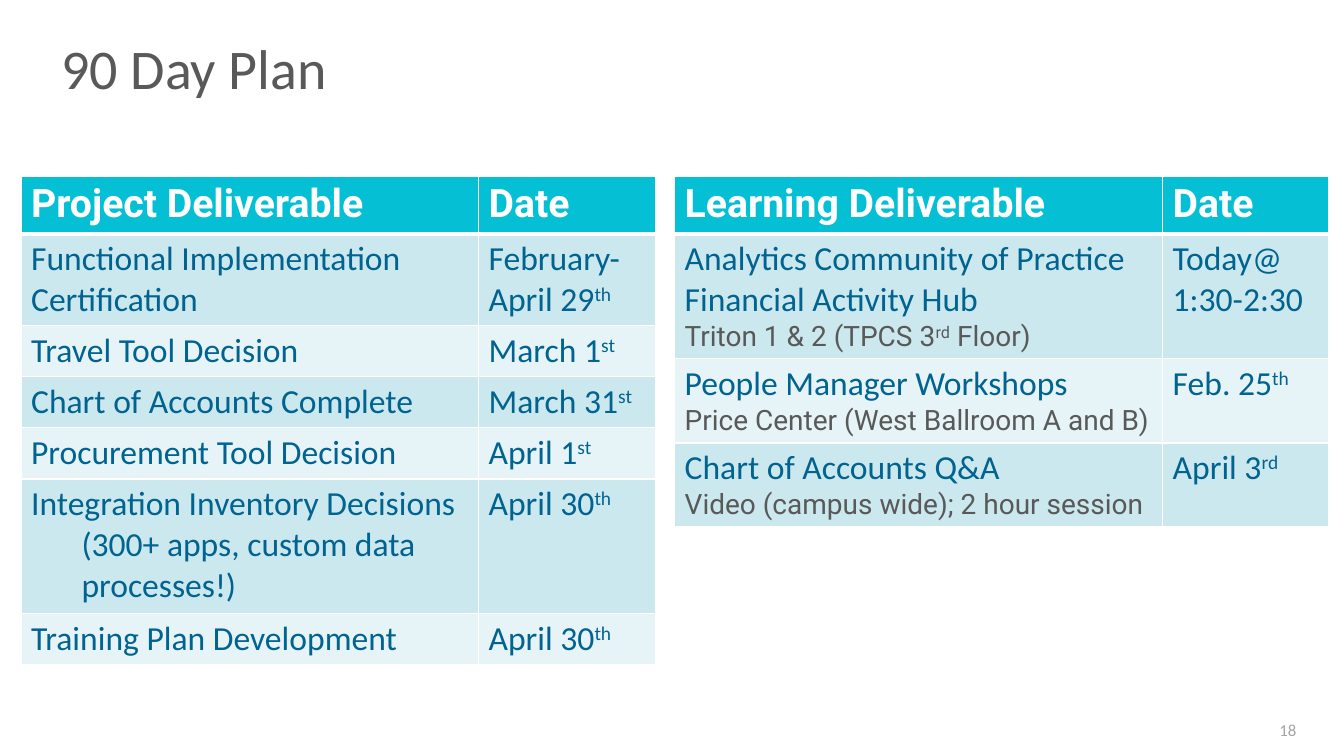
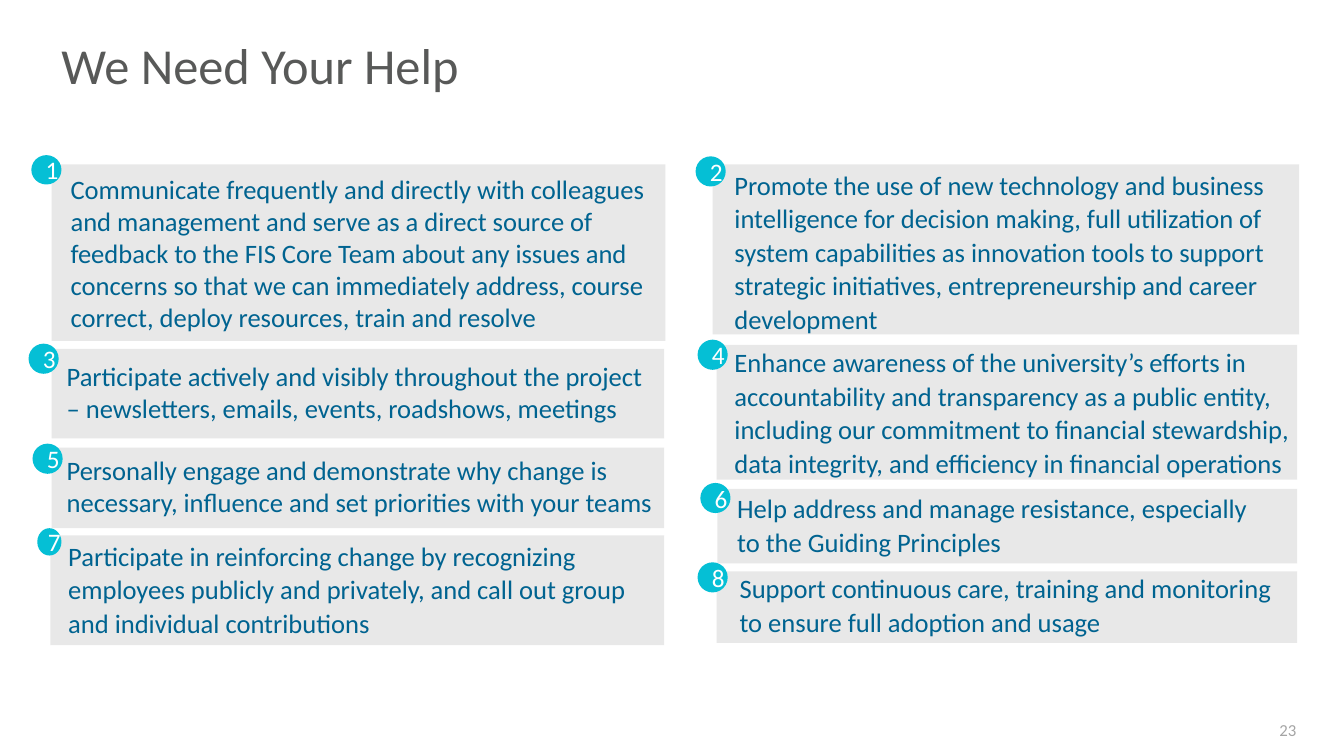
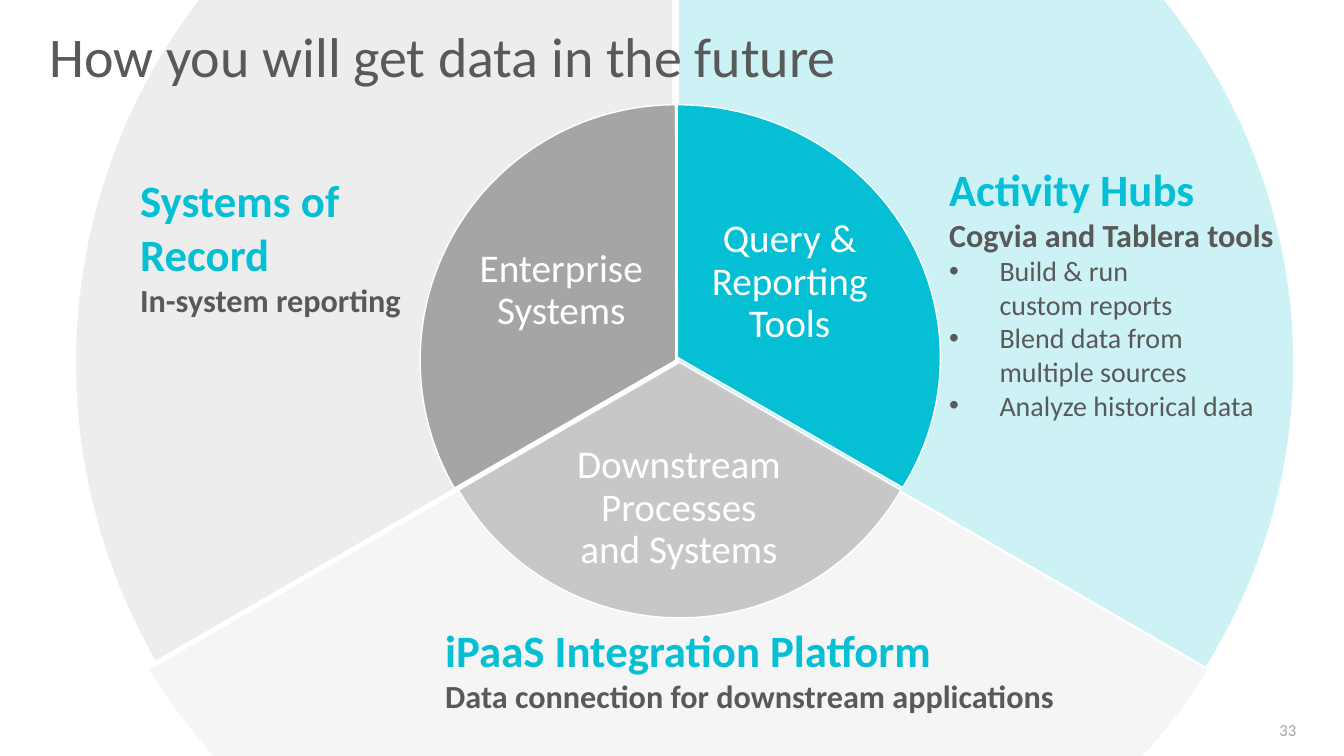
from dataclasses import dataclass, replace

from lxml import etree
from pptx import Presentation
from pptx import util as u
from pptx.dml.color import RGBColor
from pptx.enum import shapes, text
from pptx.oxml import ns

WHITE = RGBColor(0xFF, 0xFF, 0xFF)
SLATE = RGBColor(0x58, 0x59, 0x58)
GREY = RGBColor(0xA5, 0xA5, 0xA5)
PANEL = RGBColor(0xC9, 0xC9, 0xC9)
TEAL = RGBColor(0x05, 0xBF, 0xD5)
NAVY = RGBColor(0x00, 0x63, 0x90)
BAND_DARK = RGBColor(0xCC, 0xE8, 0xEF)
BAND_LIGHT = RGBColor(0xE7, 0xF4, 0xF7)

INDENT = 1.27


@dataclass(frozen=True)
class Style:
    size: float
    color: RGBColor
    font: str = "Calibri"
    bold: bool = False
    raised: bool = False


TITLE = Style(40, SLATE)
PAGE_NUMBER = Style(12, GREY)
HEADER = Style(28, WHITE, "Roboto", True)
BODY = Style(24, NAVY)
DETAIL = Style(20, SLATE, "Roboto")
CARD = Style(19, NAVY)
BADGE = Style(18, WHITE)
WEDGE = Style(28, WHITE)
HEADING = Style(32, TEAL, bold=True)
SUBHEADING = Style(23, SLATE, bold=True)
BULLET = Style(20, SLATE)


def place(box):
    return [u.Cm(length) for length in box]


def add_runs(para, words, style):
    for index, line in enumerate(words.split("\n")):
        if index:
            para.add_line_break()
        if not line:
            continue
        span = para.add_run()
        span.text = line
        span.font.size = u.Pt(style.size)
        span.font.name = style.font
        span.font.bold = style.bold
        span.font.color.rgb = style.color
        if style.raised:
            span.font._element.set("baseline", "30000")


def indent_para(para, left, first=0):
    props = para._p.get_or_add_pPr()
    props.set("marL", str(u.Cm(left)))
    props.set("indent", str(u.Cm(first)))
    return props


def add_bullet(para):
    props = indent_para(para, INDENT, -INDENT)
    etree.SubElement(props, ns.qn("a:buFont")).set("typeface", "Arial")
    etree.SubElement(props, ns.qn("a:buChar")).set("char", "•")


def fill_frame(frame, paragraphs):
    for index, runs in enumerate(paragraphs):
        para = frame.add_paragraph() if index else frame.paragraphs[0]
        for words, style in runs:
            add_runs(para, words, style)
    return frame.paragraphs


def add_text(page, box, paragraphs, align=None, spacing=None,
             anchor=text.MSO_ANCHOR.TOP, inset=None):
    frame = page.shapes.add_textbox(*place(box)).text_frame
    frame.word_wrap = True
    frame.vertical_anchor = anchor
    if inset is not None:
        frame.margin_left = frame.margin_right = u.Cm(inset)
        frame.margin_top = frame.margin_bottom = u.Cm(inset)
    paras = fill_frame(frame, paragraphs)
    for para in paras:
        para.alignment = align
        para.line_spacing = spacing
    return paras


def add_figure(page, kind, box, color, opacity=100, outline=None):
    shape = page.shapes.add_shape(kind, *place(box))
    shape.shadow.inherit = False
    shape.fill.solid()
    shape.fill.fore_color.rgb = color
    if opacity < 100:
        tint = shape._element.spPr.find(ns.qn("a:solidFill"))[0]
        etree.SubElement(tint, ns.qn("a:alpha")).set("val", str(opacity * 1000))
    if outline is None:
        shape.line.fill.background()
    else:
        shape.line.color.rgb = outline
        shape.line.width = u.Pt(1)
    return shape


def new_page(deck, number):
    page = deck.slides.add_slide(deck.slide_layouts[6])
    add_text(page, (25.3, 17.88, 7.62, 1.02), [[(str(number), PAGE_NUMBER)]],
             text.PP_ALIGN.RIGHT, anchor=text.MSO_ANCHOR.MIDDLE)
    return page


def add_title(page, words, left=1.3, top=0.91, size=40):
    add_text(page, (left, top, 31.37, 2.08),
             [[(words, replace(TITLE, size=size))]], spacing=0.9)


def style_cell(cell, color, top, bottom):
    cell.fill.solid()
    cell.fill.fore_color.rgb = color
    props = cell._tc.get_or_add_tcPr()
    widths = {"a:lnL": 1, "a:lnR": 1, "a:lnT": top, "a:lnB": bottom}
    for index, (side, width) in enumerate(widths.items()):
        edge = etree.Element(ns.qn(side), w=str(u.Pt(width)))
        solid = etree.SubElement(edge, ns.qn("a:solidFill"))
        etree.SubElement(solid, ns.qn("a:srgbClr")).set("val", str(WHITE))
        props.insert(index, edge)


def add_plan(page, left, top, widths, heights, rows):
    table = page.shapes.add_table(
        len(rows), len(widths),
        *place((left, top, sum(widths), sum(heights)))).table
    for column, width in zip(table.columns, widths):
        column.width = u.Cm(width)
    for index, (height, cells) in enumerate(zip(heights, rows)):
        table.rows[index].height = u.Cm(height)
        band = BAND_DARK if index % 2 else BAND_LIGHT
        for column, paragraphs in enumerate(cells):
            cell = table.cell(index, column)
            style_cell(cell, band if index else TEAL,
                       3 if index == 1 else 1, 1 if index else 3)
            fill_frame(cell.text_frame, paragraphs)
    return table


def plan_header(words):
    return [[(words, HEADER)]], [[("Date", HEADER)]]


def plain(words):
    return [[(words, BODY)]]


def dated(day, suffix):
    return [[(day, BODY), (suffix, replace(BODY, raised=True))]]


def build_plan(deck):
    page = new_page(deck, 18)
    add_title(page, "90 Day Plan")
    project = add_plan(
        page, 0.53, 4.45, (11.53, 4.47),
        (1.39, 2.31, 1.29, 1.29, 1.29, 3.38, 1.29), [
            plan_header("Project Deliverable"),
            (plain("Functional Implementation Certification"),
             dated("February-\nApril 29", "th")),
            (plain("Travel Tool Decision"), dated("March 1", "st")),
            (plain("Chart of Accounts Complete"), dated("March 31", "st")),
            (plain("Procurement Tool Decision"), dated("April 1", "st")),
            (plain("Integration Inventory Decisions")
             + plain("(300+ apps, custom data processes!)"),
             dated("April 30", "th")),
            (plain("Training Plan Development"), dated("April 30", "th")),
        ])
    indent_para(project.cell(5, 0).text_frame.paragraphs[1], INDENT)
    venue = [("Triton 1 & 2 (TPCS 3", DETAIL),
             ("rd", replace(DETAIL, raised=True)), (" Floor)", DETAIL)]
    add_plan(
        page, 17, 4.45, (12.3, 4.17), (1.39, 3.15, 2.12, 2.12), [
            plan_header("Learning Deliverable"),
            (plain("Analytics Community of Practice\nFinancial Activity Hub")
             + [venue], plain("Today@ 1:30-2:30")),
            ([[("People Manager Workshops\n", BODY),
               ("Price Center (West Ballroom A and B)", DETAIL)]],
             dated("Feb. 25", "th")),
            ([[("Chart of Accounts Q&A\n", BODY),
               ("Video (campus wide); 2 hour session", DETAIL)]],
             dated("April 3", "rd")),
        ])


def add_panel(page, box):
    add_figure(page, shapes.MSO_SHAPE.RECTANGLE, box, PANEL, 41)


def add_card(page, number, box, text_box, badge_box, words, indent=0, spacing=None):
    left, top = box[:2]
    dx, dy, width, height = text_box
    add_panel(page, box)
    para = add_text(page, (left + dx, top + dy, width, height),
                    [[(words, CARD)]], spacing=spacing)[0]
    if indent:
        indent_para(para, indent)
    dx, dy, width, height = badge_box
    badge = add_figure(page, shapes.MSO_SHAPE.OVAL,
                       (left + dx, top + dy, width, height), TEAL)
    badge.text_frame.vertical_anchor = text.MSO_ANCHOR.MIDDLE
    para = fill_frame(badge.text_frame, [[(str(number), BADGE)]])[0]
    para.alignment = text.PP_ALIGN.CENTER


def build_help(deck):
    page = new_page(deck, 23)
    add_title(page, "We Need Your Help", size=36)
    cards = [
        (1, (1.3, 4.14, 15.47, 4.45), (0.23, 0.1, 15.11, 4.32),
         (-0.51, -0.23, 0.76, 0.74),
         "Communicate frequently and directly with colleagues and management "
         "and serve as a direct source of feedback to the FIS Core Team about "
         "any issues and concerns so that we can immediately address, course "
         "correct, deploy resources, train and resolve"),
        (2, (17.96, 4.14, 14.78, 4.29), (-0.97, -0.05, 15.52, 4.52),
         (-0.43, -0.2, 0.76, 0.76),
         "Promote the use of new technology and business intelligence for "
         "decision making, full utilization of system capabilities as "
         "innovation tools to support strategic initiatives, "
         "entrepreneurship and career development", INDENT, 1.05),
        (3, (1.3, 8.79, 15.44, 2.26), (0.13, 0.15, 15.34, 1.88),
         (-0.58, -0.13, 0.76, 0.76),
         "Participate actively and visibly throughout the project "
         "– newsletters, emails, events, roadshows, meetings"),
        (4, (18.06, 8.69, 14.63, 3.4), (-1.07, -0.13, 15.85, 3.63),
         (-0.48, -0.13, 0.76, 0.76),
         "Enhance awareness of the university’s efforts in accountability and "
         "transparency as a public entity, including our commitment to "
         "financial stewardship, data integrity, and efficiency in financial "
         "operations", INDENT, 1.05),
        (5, (1.3, 11.28, 15.44, 2.03), (-1.14, 0.03, 17.8, 1.88),
         (-0.48, -0.1, 0.76, 0.76),
         "Personally engage and demonstrate why change is necessary, "
         "influence and set priorities with your teams", INDENT),
        (6, (18.08, 12.32, 14.61, 1.88), (-1.02, -0.08, 15.1, 1.96),
         (-0.43, -0.15, 0.76, 0.76),
         "Help address and manage resistance, especially to the Guiding "
         "Principles", INDENT, 1.05),
        (7, (1.27, 13.49, 15.47, 2.77), (-1.07, -0.05, 16.54, 2.82),
         (-0.33, -0.18, 0.61, 0.69),
         "Participate in reinforcing change by recognizing employees publicly "
         "and privately, and call out group and individual contributions",
         INDENT, 1.05),
        (8, (18.06, 14.4, 14.63, 1.8), (-0.94, -0.15, 15.62, 1.96),
         (-0.48, -0.23, 0.76, 0.76),
         "Support continuous care, training and monitoring to ensure full "
         "adoption and usage", INDENT, 1.05),
    ]
    for card in cards:
        add_card(page, *card)


def add_ring(page, wedges):
    for index, (box, color, opacity) in enumerate(wedges):
        pie = add_figure(page, shapes.MSO_SHAPE.PIE, box, color, opacity, WHITE)
        start = (270 + 120 * index) % 360
        pie.adjustments[0] = start * 0.6
        pie.adjustments[1] = (start + 120) % 360 * 0.6


def add_callout(page, box, heading, subheading, bullets=()):
    paragraphs = [[(heading, HEADING)], [(subheading, SUBHEADING)]]
    paragraphs += [[(words, BULLET)] for words in bullets]
    for para in add_text(page, box, paragraphs)[2:]:
        add_bullet(para)


def build_future(deck):
    page = new_page(deck, 33)
    add_ring(page, [
        ((1.57, -5.77, 31.04, 29.82), TEAL, 20),
        ((1.55, -5.89, 31.09, 30.12), GREY, 10),
        ((1.9, -5.92, 30.12, 30.12), GREY, 20),
    ])
    add_title(page, "How you will get data in the future", 1, 0.61)
    add_ring(page, [
        ((10.44, 2.64, 13.26, 12.73), TEAL, 100),
        ((10.69, 2.69, 12.88, 12.88), GREY, 57),
        ((10.59, 2.64, 12.88, 12.88), GREY, 100),
    ])
    labels = [
        ((17.65, 5, 4.5, 4.24), "Query & Reporting Tools"),
        ((14.2, 10.82, 5.82, 3.99), "Downstream\nProcesses\nand Systems"),
        ((11.96, 5.18, 4.37, 4.29), "Enterprise Systems"),
    ]
    for box, words in labels:
        add_text(page, box, [[(words, WEDGE)]], text.PP_ALIGN.CENTER, 0.9,
                 text.MSO_ANCHOR.MIDDLE, 0.1)
    add_callout(page, (3.28, 4.24, 8.59, 3.99),
                "Systems of Record", "In-system reporting")
    add_callout(page, (23.67, 3.94, 9.58, 6.88),
                "Activity Hubs", "Cogvia and Tablera tools",
                ("Build & run\ncustom reports",
                 "Blend data from\nmultiple sources",
                 "Analyze historical data"))
    add_callout(page, (10.97, 15.57, 22.5, 2.62), "iPaaS Integration Platform",
                "Data connection for downstream applications")


def main():
    deck = Presentation()
    deck.slide_width, deck.slide_height = u.Cm(33.87), u.Cm(19.05)
    build_plan(deck)
    build_help(deck)
    build_future(deck)
    deck.save("out.pptx")


if __name__ == "__main__":
    main()
